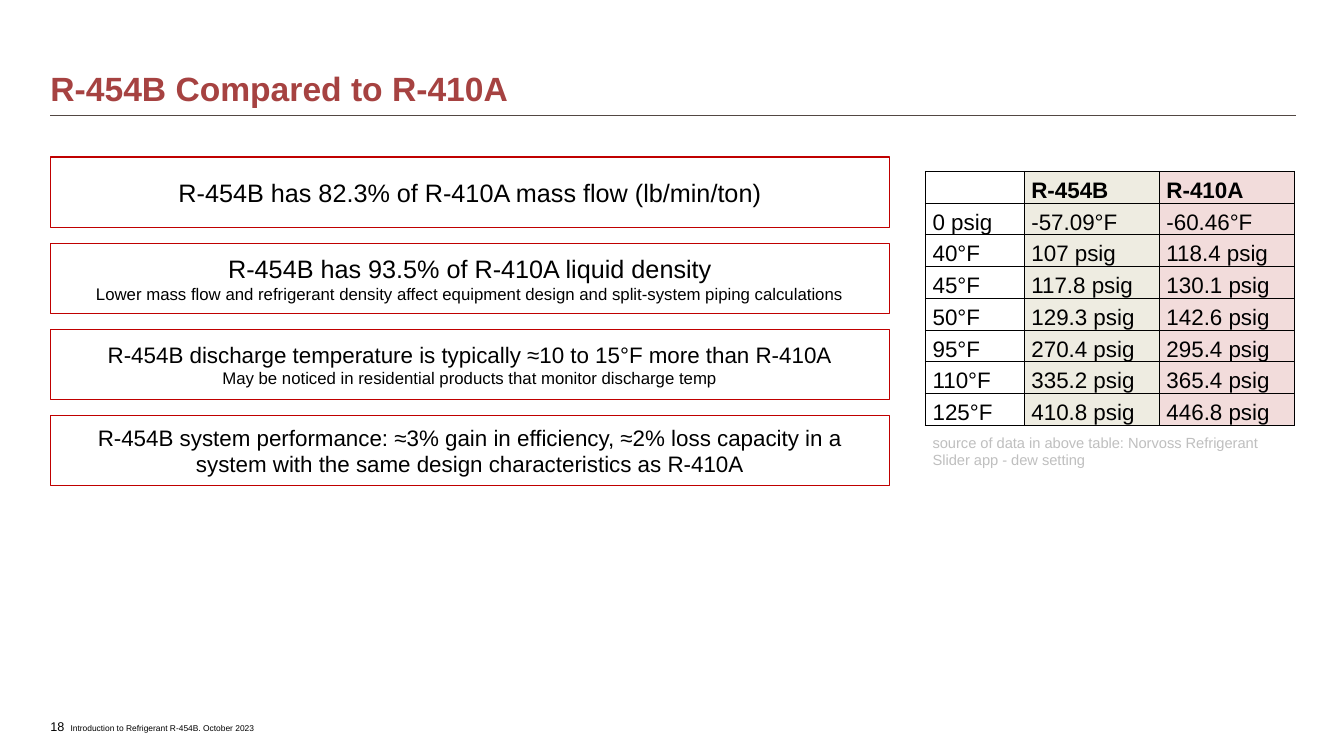
"""Build the slide that compares refrigerants R-454B and R-410A."""
from lxml.etree import SubElement
from pptx import Presentation
from pptx.dml.color import RGBColor
from pptx.enum.shapes import MSO_CONNECTOR as Connector, MSO_SHAPE as Shape
from pptx.enum.text import MSO_ANCHOR as Anchor, PP_ALIGN as Align
from pptx.oxml.ns import qn
from pptx.util import Inches, Pt

TITLE = "R-454B Compared to R-410A"
PAGE_NUMBER = "18"
FOOTER = "Introduction to Refrigerant R-454B. October 2023"
FINDINGS = [
    [("R-454B has 82.3% of R-410A mass flow (lb/min/ton)", 18)],
    [("R-454B has 93.5% of R-410A liquid density", 18),
     ("Lower mass flow and refrigerant density affect equipment design and "
      "split-system piping calculations", 12)],
    [("R-454B discharge temperature is typically ≈10 to 15°F more than R-410A", 16),
     ("May be noticed in residential products that monitor discharge temp", 12)],
    [("R-454B system performance: ≈3% gain in efficiency, ≈2% loss capacity in a "
      "system with the same design characteristics as R-410A", 16)],
]
PRESSURES = [
    ("", "R-454B", "R-410A"),
    ("0 psig", "-57.09°F", "-60.46°F"),
    ("40°F", "107 psig", "118.4 psig"),
    ("45°F", "117.8 psig", "130.1 psig"),
    ("50°F", "129.3 psig", "142.6 psig"),
    ("95°F", "270.4 psig", "295.4 psig"),
    ("110°F", "335.2 psig", "365.4 psig"),
    ("125°F", "410.8 psig", "446.8 psig"),
]
SOURCE_NOTE = ("source of data in above table: Norvoss Refrigerant "
               "Slider app - dew setting")
COLORS = {"title": "A64241", "rule": "524743", "text": "000000", "box": "C00000",
          "note": "BFBFBF", "R-454B": "EEECE1", "R-410A": "F2DCDB"}
FONT = "Arial"
LEFT, CONTENT_WIDTH = 0.5, 12.35
BOX_TOP, BOX_WIDTH, BOX_HEIGHT, BOX_PITCH = 1.56, 8.32, 0.7, 2.56 / 3
TABLE_LEFT, TABLE_TOP = 9.18, 1.7
COLUMN_WIDTHS = (0.98, 1.34, 1.34)
ROW_HEIGHT, NOTE_HEIGHT = 2.52 / 8, 0.43


def color(name):
    return RGBColor.from_string(COLORS[name])


def format_runs(paragraph, size, color_name="text", bold=False):
    for run in paragraph.runs:
        run.font.name = FONT
        run.font.size = Pt(size)
        run.font.bold = bold
        run.font.color.rgb = color(color_name)


def clear_margins(frame):
    frame.margin_left = frame.margin_right = frame.margin_top = frame.margin_bottom = 0


def add_label(slide, text, size, left, top, width, height, anchor):
    frame = slide.shapes.add_textbox(
        Inches(left), Inches(top), Inches(width), Inches(height)).text_frame
    clear_margins(frame)
    frame.word_wrap = True
    frame.vertical_anchor = anchor
    frame.text = text
    format_runs(frame.paragraphs[0], size)


def add_heading(slide):
    title = slide.shapes.title
    title.left, title.top = Inches(LEFT), Inches(0.21)
    title.width, title.height = Inches(CONTENT_WIDTH), Inches(0.87)
    frame = title.text_frame
    clear_margins(frame)
    frame.vertical_anchor = Anchor.BOTTOM
    frame.text = TITLE
    heading = frame.paragraphs[0]
    heading.alignment = Align.LEFT
    heading.line_spacing = 0.9
    format_runs(heading, 24, "title", True)

    rule = slide.shapes.add_connector(
        Connector.STRAIGHT, Inches(LEFT), Inches(1.15),
        Inches(LEFT + CONTENT_WIDTH), Inches(1.15))
    rule.line.color.rgb = color("rule")
    rule.line.width = Pt(0.75)
    SubElement(rule._element.spPr, qn("a:effectLst"))


def add_finding(slide, index, lines):
    box = slide.shapes.add_shape(
        Shape.RECTANGLE, Inches(LEFT), Inches(BOX_TOP + index * BOX_PITCH),
        Inches(BOX_WIDTH), Inches(BOX_HEIGHT))
    box.shadow.inherit = False
    box.fill.background()
    box.line.color.rgb = color("box")
    box.line.width = Pt(1)
    frame = box.text_frame
    frame.word_wrap = True
    frame.vertical_anchor = Anchor.MIDDLE
    frame.text = "\n".join(text for text, _ in lines)
    for paragraph, (_, size) in zip(frame.paragraphs, lines):
        paragraph.alignment = Align.CENTER
        format_runs(paragraph, size)


def set_borders(cell, black_sides):
    properties = cell._tc.get_or_add_tcPr()
    for side in "LRTB":
        border = SubElement(properties, qn(f"a:ln{side}"), w=str(Pt(1)))
        if side in black_sides:
            fill = SubElement(border, qn("a:solidFill"))
            SubElement(fill, qn("a:srgbClr"), val=COLORS["text"])
        else:
            SubElement(border, qn("a:noFill"))


def fill_cell(cell, text, size, color_name="text", bold=False):
    cell.vertical_anchor = Anchor.BOTTOM
    cell.margin_left = cell.margin_right = Inches(0.07)
    cell.margin_top = cell.margin_bottom = 0
    cell.text = text
    paragraph = cell.text_frame.paragraphs[0]
    paragraph.line_spacing = 1.07
    paragraph.font.size = Pt(size)
    format_runs(paragraph, size, color_name, bold)


def add_pressure_table(slide):
    note_row = len(PRESSURES)
    table = slide.shapes.add_table(
        note_row + 1, len(COLUMN_WIDTHS), Inches(TABLE_LEFT), Inches(TABLE_TOP),
        Inches(sum(COLUMN_WIDTHS)), Inches(note_row * ROW_HEIGHT + NOTE_HEIGHT)).table
    table.first_row = table.horz_banding = False
    for column, width in zip(table.columns, COLUMN_WIDTHS):
        column.width = Inches(width)
    for row in table.rows:
        row.height = Inches(ROW_HEIGHT)
    table.rows[note_row].height = Inches(NOTE_HEIGHT)

    for row, values in enumerate(PRESSURES):
        for column, (refrigerant, value) in enumerate(zip(PRESSURES[0], values)):
            cell = table.cell(row, column)
            set_borders(cell, "LRTB")
            fill_cell(cell, value, 16, bold=row == 0)
            if refrigerant:
                cell.fill.solid()
                cell.fill.fore_color.rgb = color(refrigerant)
            else:
                cell.fill.background()

    for cell in table.rows[note_row].cells:
        set_borders(cell, "T")
        cell.fill.background()
    note = table.cell(note_row, 0)
    note.merge(table.cell(note_row, len(COLUMN_WIDTHS) - 1))
    fill_cell(note, SOURCE_NOTE, 10.5, "note")


def main():
    deck = Presentation()
    deck.slide_width, deck.slide_height = Inches(13.33), Inches(7.5)
    slide = deck.slides.add_slide(deck.slide_layouts[5])
    add_heading(slide)
    add_label(slide, PAGE_NUMBER, 9, LEFT, 7.09, 0.39, 0.24, Anchor.MIDDLE)
    add_label(slide, FOOTER, 6, 0.7, 7.17, 2.2, 0.1, Anchor.TOP)
    add_pressure_table(slide)
    for index, lines in enumerate(FINDINGS):
        add_finding(slide, index, lines)
    deck.save("out.pptx")


if __name__ == "__main__":
    main()
